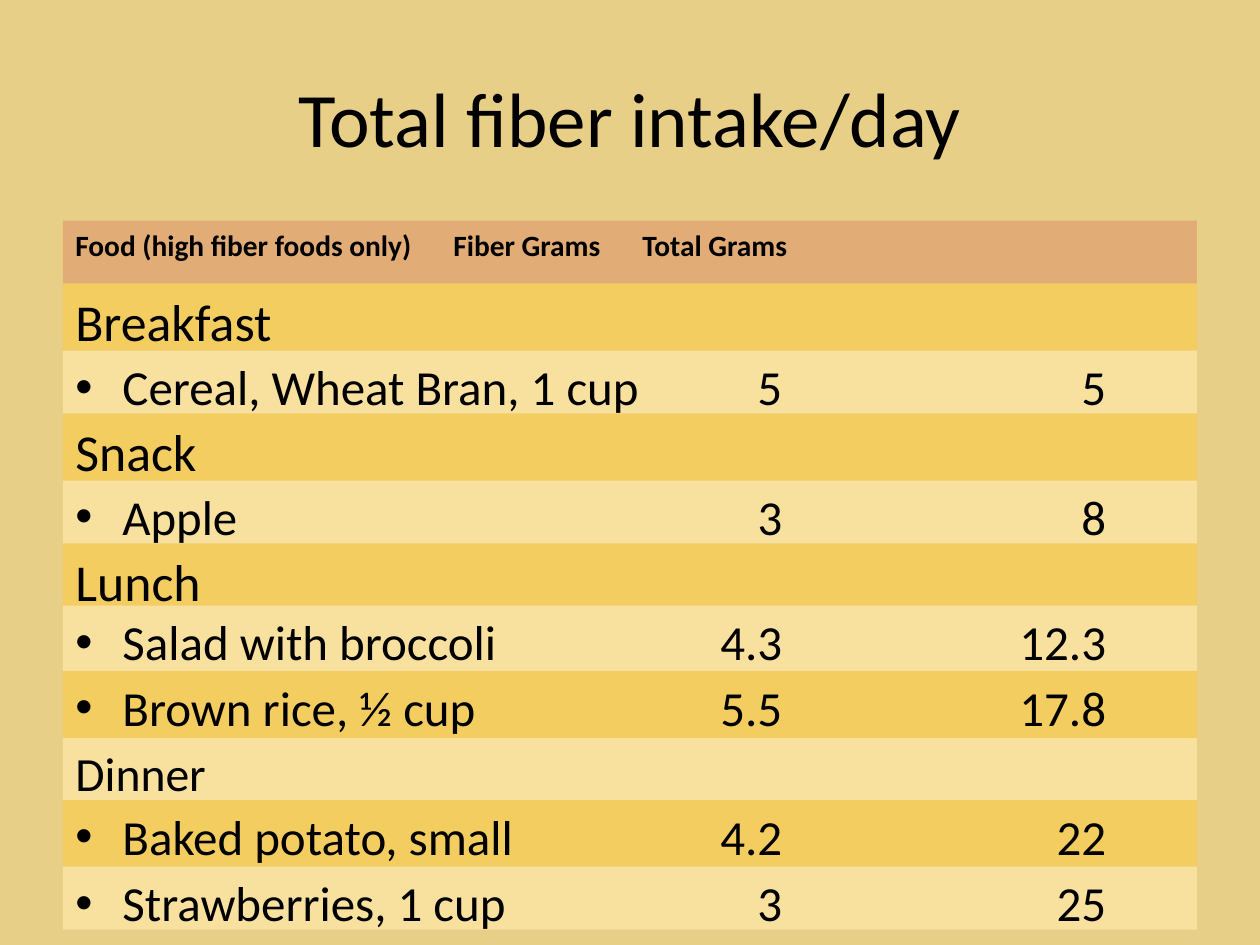
from pptx import Presentation
from pptx.dml.color import RGBColor
from pptx.enum.shapes import MSO_SHAPE
from pptx.enum.text import MSO_ANCHOR, MSO_AUTO_SIZE, PP_ALIGN
from pptx.oxml.ns import qn
from pptx.util import Cm, Pt
from lxml.etree import SubElement

BACKGROUND, HEADER = "E8CF87", "E2AC76"
DARK_BAND, LIGHT_BAND = "F3CD60", "F8E19F"
INK = "000000"
LEFT, WIDTH = 1.27, 22.86
HEADER_TABS = (14.1, 21.54)
NUMBER_TABS = (14.25, 20.78)
HEADER_TEXT = "Food (high fiber foods only)\tFiber Grams\tTotal Grams"

ROWS = (
    ("Breakfast", 29.6, 1.35, DARK_BAND),
    ("Cereal, Wheat Bran, 1 cup\t5\t5", 28, 1.27, LIGHT_BAND),
    ("Snack", 29.6, 1.35, DARK_BAND),
    ("Apple\t3\t8", 27.9, 1.27, LIGHT_BAND),
    ("Lunch", 29.6, 1.25, DARK_BAND),
    ("Salad with broccoli\t4.3\t12.3", 28, 1.32, LIGHT_BAND),
    ("Brown rice, ½ cup\t5.5\t17.8", 28, 1.35, DARK_BAND),
    ("Dinner", 27.2, 1.25, LIGHT_BAND),
    ("Baked potato, small\t4.2\t22", 28, 1.34, DARK_BAND),
    ("Strawberries, 1 cup\t3\t25", 28, 1.27, LIGHT_BAND),
)


def paint(fill, color):
    """Give a fill one solid colour from a hex string."""
    fill.solid()
    fill.fore_color.rgb = RGBColor.from_string(color)


def write_text(shape, text, size, bold=False, align=PP_ALIGN.LEFT,
               anchor=MSO_ANCHOR.TOP, bullet=False, tabs=()):
    """Write one formatted paragraph into a shape, with right-aligned tabs."""
    frame = shape.text_frame
    frame.word_wrap = True
    frame.auto_size = MSO_AUTO_SIZE.NONE
    frame.vertical_anchor = anchor
    paragraph = frame.paragraphs[0]
    paragraph.alignment = align
    paragraph.space_before = Pt(0)
    run = paragraph.add_run()
    run.text = text
    run.font.name, run.font.size, run.font.bold = "Calibri", Pt(size), bold
    paint(run.font.fill, INK)

    properties = paragraph._p.get_or_add_pPr()
    indent = Cm(0.95) if bullet else 0
    properties.set("marL", str(indent))
    properties.set("indent", str(-indent))
    if bullet:
        SubElement(properties, qn("a:buFont"), typeface="Arial")
        SubElement(properties, qn("a:buChar"), char="•")
    else:
        SubElement(properties, qn("a:buNone"))
    if tabs:
        tab_list = SubElement(properties, qn("a:tabLst"))
        for position in tabs:
            SubElement(tab_list, qn("a:tab"), pos=str(Cm(position)), algn="r")


def add_bar(slide, left, top, width, height, color):
    """Add a flat coloured bar and return it."""
    bar = slide.shapes.add_shape(MSO_SHAPE.RECTANGLE, Cm(left), Cm(top),
                                 Cm(width), Cm(height))
    bar.shadow.inherit = False
    bar.line.fill.background()
    paint(bar.fill, color)
    return bar


def add_title(slide, left, top, width, height):
    """Move and fill the title placeholder."""
    title = slide.shapes.title
    title.left, title.top = Cm(left), Cm(top)
    title.width, title.height = Cm(width), Cm(height)
    write_text(title, "Total fiber intake/day", 44, align=PP_ALIGN.CENTER,
               anchor=MSO_ANCHOR.MIDDLE)


def add_header(slide, left, top, width, height):
    """Add the bar with the column labels."""
    header = add_bar(slide, left, top, width, height, HEADER)
    write_text(header, HEADER_TEXT, 16.8, bold=True, tabs=HEADER_TABS)


def add_food_rows(slide, left, top, width):
    """Stack the meal and food bars downwards from the given top."""
    for text, size, height, color in ROWS:
        bar = add_bar(slide, left, top, width, height, color)
        is_food = "\t" in text
        write_text(bar, text, size, bullet=is_food,
                   tabs=NUMBER_TABS if is_food else ())
        top += height


def main():
    """Build the fiber intake slide and save it."""
    presentation = Presentation()
    presentation.slide_width, presentation.slide_height = Cm(25.4), Cm(19.05)
    slide = presentation.slides.add_slide(presentation.slide_layouts[5])
    paint(slide.background.fill, BACKGROUND)
    add_title(slide, LEFT, 0.76, WIDTH, 3.18)
    add_header(slide, LEFT, 4.45, WIDTH, 1.27)
    add_food_rows(slide, LEFT, 5.72, WIDTH)
    presentation.save("out.pptx")


if __name__ == "__main__":
    main()
